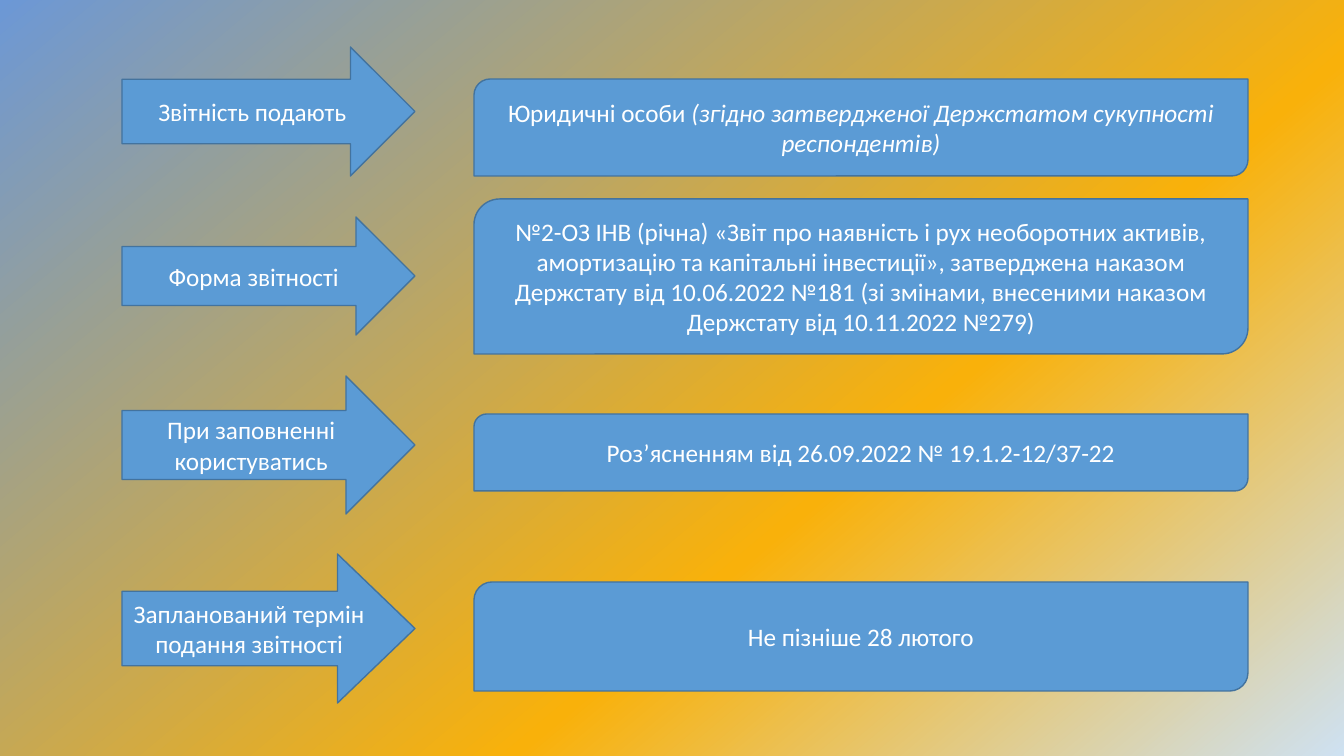
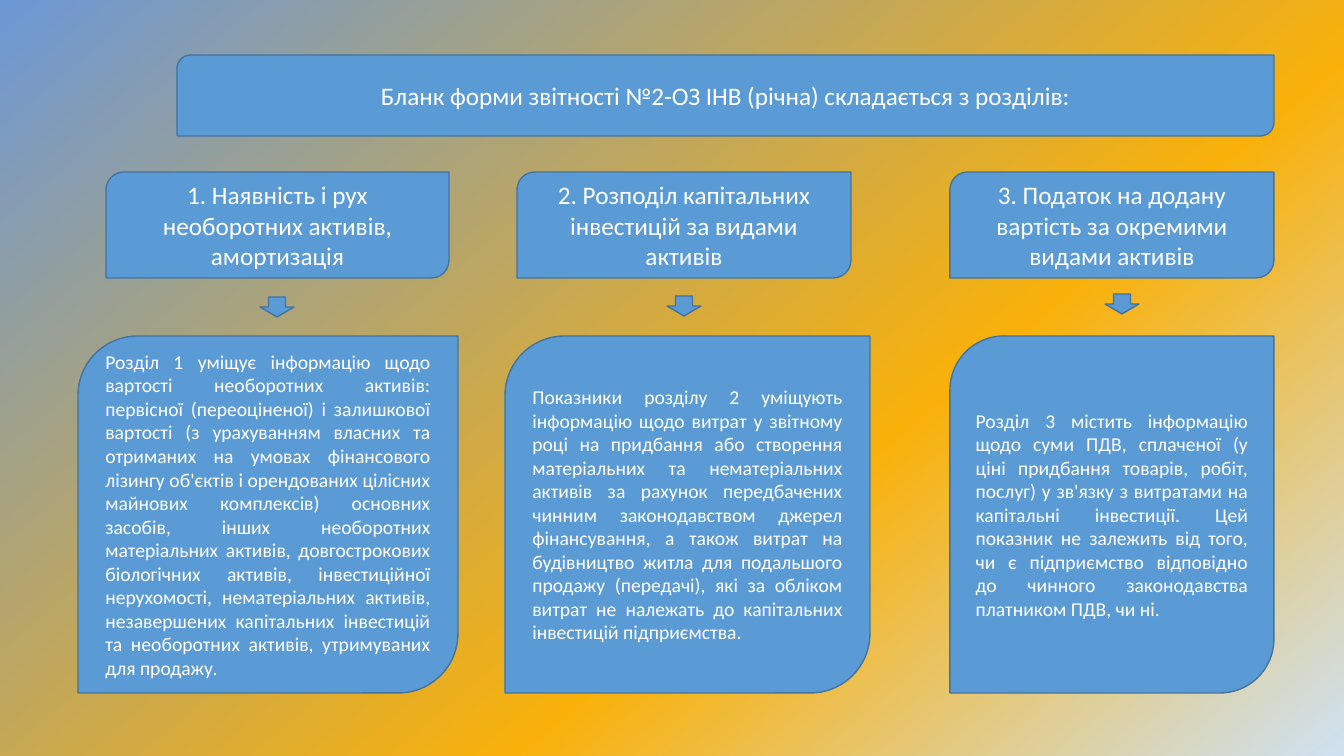
import dataclasses

import lxml.etree
import pptx
import pptx.dml.color
import pptx.enum.shapes
import pptx.enum.text
import pptx.oxml.ns
import pptx.util

SHAPE = pptx.enum.shapes.MSO_SHAPE
ALIGN = pptx.enum.text.PP_ALIGN
EMU_PER_PX = 914400 / 100.8


@dataclasses.dataclass(frozen=True)
class Theme:
    font: str = "Calibri"
    fill: str = "5B9BD5"
    outline: str = "43739E"
    text: str = "FFFFFF"
    gradient: tuple = ((0, "6C98D6"), (63, "F9B10A"), (100, "CEE1F2"))
    gradient_angle: int = 50
    line_pt: int = 1
    label_pt: int = 18
    body_pt: int = 14


def px(n):
    return pptx.util.Emu(round(n * EMU_PER_PX))


def rgb(value):
    return pptx.dml.color.RGBColor.from_string(value)


class Deck:
    """Holds the presentation, its style and the slide being filled."""

    def __init__(self, theme):
        self.theme = theme
        self.prs = pptx.Presentation()
        self.prs.slide_width, self.prs.slide_height = px(1344), px(756)
        self.slide = None
        self.set_background()

    def set_background(self):
        """Put the gradient on the master, so that every slide inherits it."""
        qn = pptx.oxml.ns.qn
        master = self.prs.slide_master
        fill = master.background.fill
        fill.gradient()
        fill.gradient_angle = 360 - self.theme.gradient_angle
        stops = next(master.element.iter(qn("a:gsLst")))
        for stop in list(stops):
            stops.remove(stop)
        for percent, color in self.theme.gradient:
            stop = lxml.etree.SubElement(stops, qn("a:gs"), pos=str(percent * 1000))
            lxml.etree.SubElement(stop, qn("a:srgbClr"), val=color)

    def new_slide(self):
        self.slide = self.prs.slides.add_slide(self.prs.slide_layouts[6])

    def shape(self, kind, x, y, w, h):
        sp = self.slide.shapes.add_shape(kind, px(x), px(y), px(w), px(h))
        sp.shadow.inherit = False
        sp.fill.solid()
        sp.fill.fore_color.rgb = rgb(self.theme.fill)
        sp.line.color.rgb = rgb(self.theme.outline)
        sp.line.width = pptx.util.Pt(self.theme.line_pt)
        return sp

    def set_text(self, sp, text, size, align, italic_tail=""):
        """Fill a shape with one paragraph, its tail in italics."""
        tf = sp.text_frame
        tf.word_wrap = True
        tf.vertical_anchor = pptx.enum.text.MSO_ANCHOR.MIDDLE
        p = tf.paragraphs[0]
        p.alignment = align
        p.font.name = self.theme.font
        p.font.size = pptx.util.Pt(size)
        p.font.color.rgb = rgb(self.theme.text)
        p.add_run().text = text
        if italic_tail:
            r = p.add_run()
            r.text = italic_tail
            r.font.italic = True

    def label_arrow(self, x, y, w, h, text, head=0.5):
        sp = self.shape(SHAPE.RIGHT_ARROW, x, y, w, h)
        sp.adjustments[1] = head
        self.set_text(sp, text, self.theme.label_pt, ALIGN.CENTER)

    def label_box(self, x, y, w, h, text, italic_tail=""):
        sp = self.shape(SHAPE.ROUND_2_DIAG_RECTANGLE, x, y, w, h)
        self.set_text(sp, text, self.theme.label_pt, ALIGN.CENTER, italic_tail)

    def body_box(self, x, y, w, h, text):
        sp = self.shape(SHAPE.ROUND_2_DIAG_RECTANGLE, x, y, w, h)
        self.set_text(sp, text, self.theme.body_pt, ALIGN.JUSTIFY)

    def down_arrow(self, x, y):
        self.shape(SHAPE.DOWN_ARROW, x, y, 34, 20)


# Arrow: top, height, text, head length; box: top, height, text, italic tail
REQUIREMENTS = [
    ((47, 129, "Звітність подають", 0.5),
     (79, 97, "Юридичні особи ",
      "(згідно затвердженої Держстатом сукупності респондентів)")),
    ((217, 118, "Форма звітності", 0.5),
     (199, 155,
      "№2-ОЗ ІНВ (річна) «Звіт про наявність і рух необоротних активів, "
      "амортизацію та капітальні інвестиції», затверджена наказом Держстату "
      "від 10.06.2022 №181 (зі змінами, внесеними наказом Держстату від "
      "10.11.2022 №279)", "")),
    ((376, 138, "При заповненні користуватись", 0.5),
     (414, 77, "Роз’ясненням від 26.09.2022 № 19.1.2-12/37-22", "")),
    ((554, 149, "Запланований термін подання звітності", 0.52),
     (582, 109, "Не пізніше 28 лютого", "")),
]

# Heading: left, width, text; arrow: left, top; body: left, width, text
SECTIONS = [
    ((106, 343, "1. Наявність і рух необоротних активів, амортизація"),
     (260, 297),
     (78, 380,
      "Розділ 1 уміщує інформацію щодо вартості необоротних активів: "
      "первісної (переоціненої) і залишкової вартості (з урахуванням власних "
      "та отриманих на умовах фінансового лізингу об'єктів і орендованих "
      "цілісних майнових комплексів) основних засобів, інших необоротних "
      "матеріальних активів, довгострокових біологічних активів, "
      "інвестиційної нерухомості, нематеріальних активів, незавершених "
      "капітальних інвестицій та необоротних активів, утримуваних для "
      "продажу.")),
    ((517, 334, "2. Розподіл капітальних інвестицій за видами активів"),
     (667, 296),
     (505, 365,
      "Показники розділу 2 уміщують інформацію щодо витрат у звітному році "
      "на придбання або створення матеріальних та нематеріальних активів за "
      "рахунок передбачених чинним законодавством джерел фінансування, а "
      "також витрат на будівництво житла для подальшого продажу (передачі), "
      "які за обліком витрат не належать до капітальних інвестицій "
      "підприємства.")),
    ((950, 324, "3. Податок на додану вартість за окремими видами активів"),
     (1105, 294),
     (950, 324,
      "Розділ 3 містить інформацію щодо суми ПДВ, сплаченої (у ціні "
      "придбання товарів, робіт, послуг) у зв'язку з витратами на "
      "капітальні інвестиції. Цей показник не залежить від того, чи є "
      "підприємство відповідно до чинного законодавства платником ПДВ, "
      "чи ні.")),
]


def requirements_slide(deck):
    deck.new_slide()
    for (y, h, text, head), _ in REQUIREMENTS:
        deck.label_arrow(122, y, 293, h, text, head)
    for _, (y, h, text, italic_tail) in REQUIREMENTS:
        deck.label_box(474, y, 774, h, text, italic_tail)


def sections_slide(deck):
    deck.new_slide()
    deck.label_box(177, 55, 1097, 81,
                   "Бланк форми звітності №2-ОЗ ІНВ (річна) складається з розділів:")
    for (x, w, heading), arrow, (body_x, body_w, body) in SECTIONS:
        deck.label_box(x, 172, w, 106, heading)
        deck.body_box(body_x, 336, body_w, 357, body)
        deck.down_arrow(*arrow)


def main():
    deck = Deck(Theme())
    requirements_slide(deck)
    sections_slide(deck)
    deck.prs.save("out.pptx")


if __name__ == "__main__":
    main()
